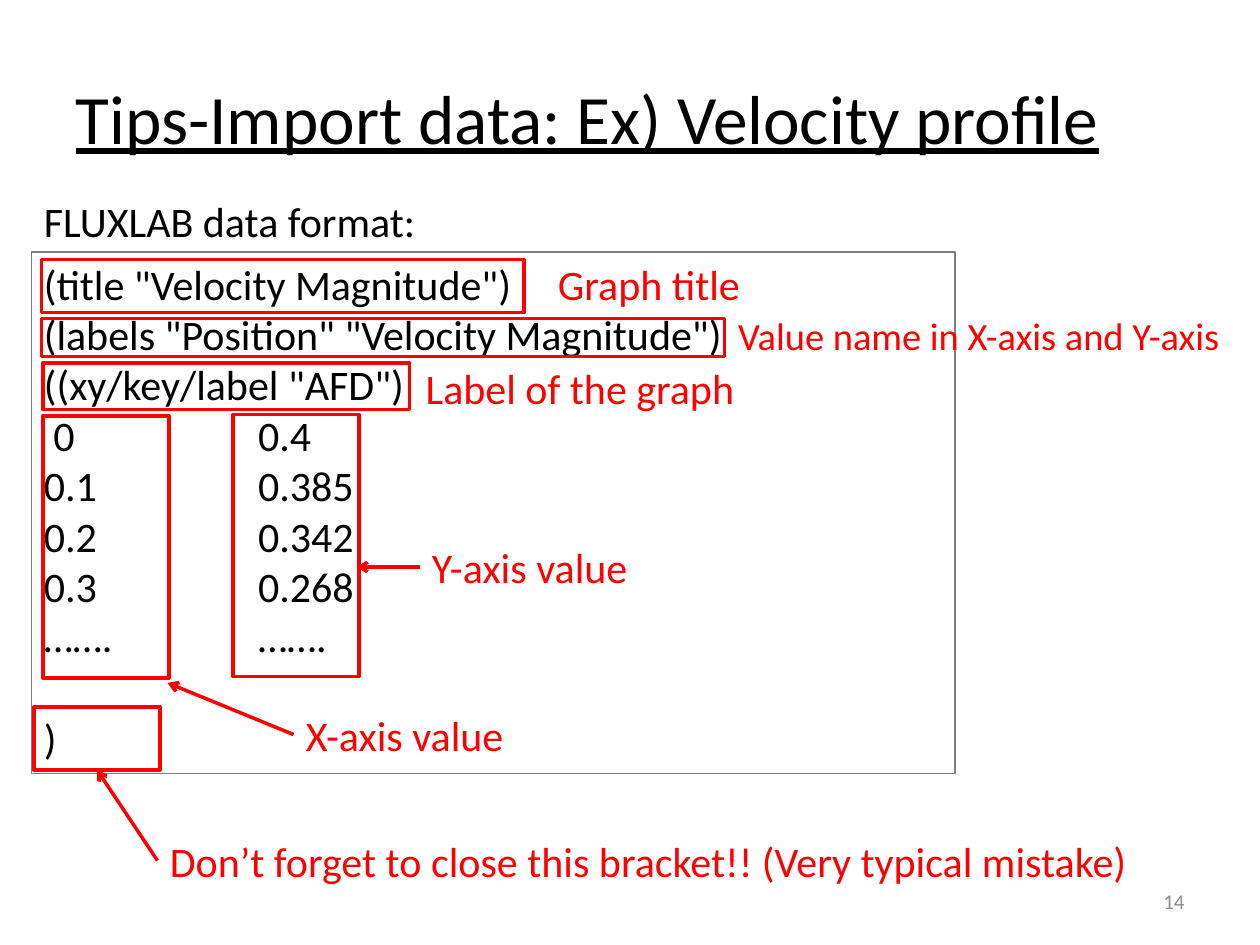
from lxml import etree
from pptx import Presentation
from pptx.dml.color import RGBColor
from pptx.enum.shapes import MSO_CONNECTOR, MSO_SHAPE
from pptx.enum.text import MSO_ANCHOR, PP_ALIGN
from pptx.oxml.ns import qn
from pptx.util import Inches, Pt

STRAIGHT = MSO_CONNECTOR.STRAIGHT
RECTANGLE = MSO_SHAPE.RECTANGLE
TOP, MIDDLE = MSO_ANCHOR.TOP, MSO_ANCHOR.MIDDLE
LEFT, RIGHT = PP_ALIGN.LEFT, PP_ALIGN.RIGHT
LEFT_SIDE, BOTTOM_SIDE = 1, 2

BLACK = RGBColor(0, 0, 0)
RED = RGBColor(255, 0, 0)
FRAME_GRAY = RGBColor(0x7F, 0x7F, 0x7F)
NUMBER_GRAY = RGBColor(0x8C, 0x8C, 0x8C)
FONT = "Calibri"

TITLE = "Tips-Import data: Ex) Velocity profile"
HEADING = ("FLUXLAB data format:", (0.25, 1.5, 3.58, 0.5))
HEADER_LINES = [
    '(title "Velocity Magnitude")',
    '(labels "Position" "Velocity Magnitude")',
    '((xy/key/label "AFD")',
]
PROFILE = [
    (" 0", "0.4"),
    ("0.1", "0.385"),
    ("0.2", "0.342"),
    ("0.3", "0.268"),
    ("…….", "……."),
]
CLOSING = ")"
FILE_FRAME = (0.25, 2, 7.33, 4.14)
VALUE_COLUMN = Inches(1.7)

NOTES = {
    "title": ("Graph title", (4.33, 2, 2, 0.5), 24),
    "labels": ("Value name in X-axis and Y-axis", (5.76, 2.43, 4.16, 0.47), 22),
    "key": ("Label of the graph", (3.28, 2.83, 2.75, 0.5), 24),
    "x": ("X-axis value", (2.33, 5.58, 2.17, 0.5), 24),
    "y": ("Y-axis value", (3.33, 4.25, 2.17, 0.5), 24),
    "bracket": ("Don’t forget to close this bracket!! (Very typical mistake)",
                (1.25, 6.58, 7.92, 0.5), 24),
}
HIGHLIGHTS = {
    "title": (0.33, 2.06, 3.83, 0.42),
    "labels": (0.33, 2.53, 5.42, 0.3),
    "key": (0.34, 2.88, 2.91, 0.37),
    "x": (0.34, 3.3, 1, 2.08),
    "y": (1.85, 3.29, 1, 2.08),
    "bracket": (0.27, 5.61, 1, 0.5),
}
ARROW_ENDS = {"x": (1.33, 5.42), "y": (2.83, 4.5), "bracket": (0.77, 6.11)}
PAGE_NUMBER = ("14", (7.17, 6.95, 2.33, 0.4))


def inches(values):
    return [Inches(value) for value in values]


def write(para, text, size, color, align=LEFT):
    para.alignment = align
    span = para.add_run()
    span.text = text
    span.font.name = FONT
    span.font.size = Pt(size)
    span.font.color.rgb = color
    return span


def add_text(page, text, place, size, color, align=LEFT, anchor=TOP):
    box = page.shapes.add_textbox(*inches(place))
    box.text_frame.word_wrap = True
    box.text_frame.vertical_anchor = anchor
    write(box.text_frame.paragraphs[0], text, size, color, align)
    return box


def add_frame(page, place, color, width):
    frame = page.shapes.add_shape(RECTANGLE, *inches(place))
    frame.shadow.inherit = False
    frame.fill.background()
    frame.line.color.rgb = color
    frame.line.width = Pt(width)
    return frame


def add_data_file(page):
    frame = add_frame(page, FILE_FRAME, FRAME_GRAY, 0.75)
    body = frame.text_frame
    body.word_wrap = True
    body.vertical_anchor = TOP
    lines = HEADER_LINES + ["\t".join(row) for row in PROFILE] + [CLOSING]
    for index, line in enumerate(lines):
        para = body.add_paragraph() if index else body.paragraphs[0]
        write(para, line, 24, BLACK)
        if line == CLOSING:
            para.space_before = Pt(29)
        if "\t" in line:
            stops = etree.SubElement(para._p.get_or_add_pPr(), qn("a:tabLst"))
            etree.SubElement(stops, qn("a:tab"), pos=str(VALUE_COLUMN), algn="l")


def add_arrow(page, note, end, target):
    arrow = page.shapes.add_connector(STRAIGHT, 0, 0, *inches(end))
    arrow.begin_connect(note, LEFT_SIDE)
    if target is not None:
        arrow.end_connect(target, BOTTOM_SIDE)
    arrow.line.color.rgb = RED
    arrow.line.width = Pt(2)
    etree.SubElement(arrow.line._get_or_add_ln(), qn("a:tailEnd"), type="arrow")
    etree.SubElement(arrow._element.spPr, qn("a:effectLst"))


def main():
    deck = Presentation()
    deck.slide_width, deck.slide_height = inches((10, 7.5))
    page = deck.slides.add_slide(deck.slide_layouts[5])

    title = page.shapes.title
    title.left, title.top, title.width, title.height = inches((0.5, 0.3, 9, 1.25))
    title.text_frame.vertical_anchor = MIDDLE
    write(title.text_frame.paragraphs[0], TITLE, 39.6, BLACK).font.underline = True

    add_data_file(page)
    add_text(page, *HEADING, 24, BLACK)
    notes = {key: add_text(page, *note, RED) for key, note in NOTES.items()}
    frames = {key: add_frame(page, place, RED, 2) for key, place in HIGHLIGHTS.items()}
    for key, end in ARROW_ENDS.items():
        add_arrow(page, notes[key], end, frames[key] if key == "bracket" else None)
    add_text(page, *PAGE_NUMBER, 12, NUMBER_GRAY, RIGHT, MIDDLE)
    deck.save("out.pptx")


if __name__ == "__main__":
    main()
